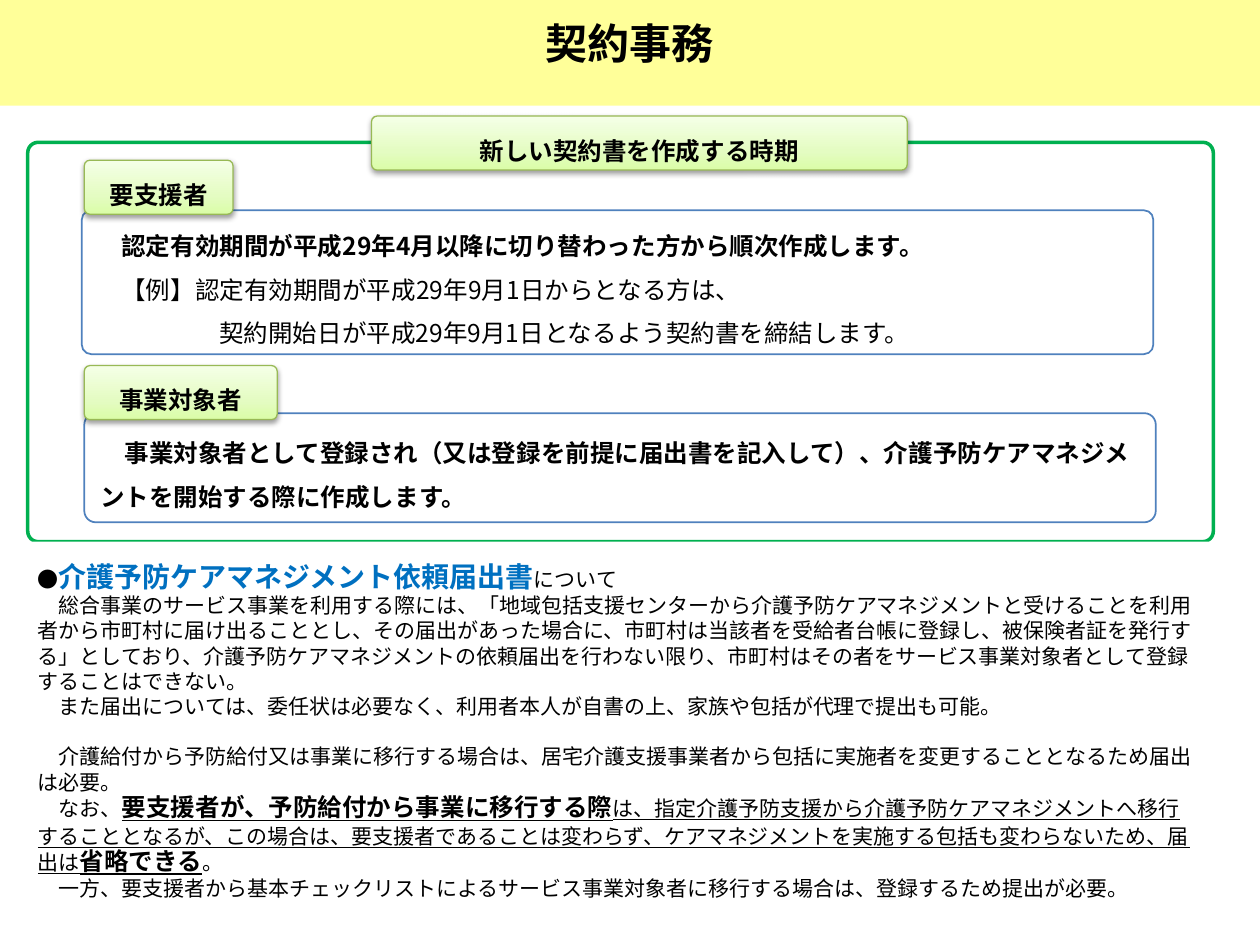
from lxml import etree
from pptx import Presentation
from pptx.dml.color import RGBColor
from pptx.enum.shapes import MSO_SHAPE
from pptx.enum.text import MSO_ANCHOR, MSO_AUTO_SIZE, PP_ALIGN
from pptx.oxml.ns import qn
from pptx.util import Cm, Pt

ROUNDED = MSO_SHAPE.ROUNDED_RECTANGLE
MIDDLE = MSO_ANCHOR.MIDDLE
NO_FIT = MSO_AUTO_SIZE.NONE
LEFT, CENTER = PP_ALIGN.LEFT, PP_ALIGN.CENTER


def color(value):
    return RGBColor.from_string(value)


def span(text, **formats):
    return text, formats


class SlideBuilder:
    font = "Noto Sans CJK JP"
    ink = "000000"
    label_stops = [(0, "DAFDA7"), (35, "E4FCC2"), (100, "F5FFE7")]

    def __init__(self, page):
        self.page = page

    def place(self, box, left, top, width, height):
        box.left, box.top = Cm(left), Cm(top)
        box.width, box.height = Cm(width), Cm(height)

    def fill(self, box, value):
        box.fill.solid()
        box.fill.fore_color.rgb = color(value)

    def add_text(self, box, paragraphs, size=14, align=LEFT, spacing=25):
        frame = box.text_frame
        frame.word_wrap = True
        frame.auto_size = NO_FIT
        frame.vertical_anchor = MIDDLE
        for index, (spans, layout) in enumerate(paragraphs):
            para = frame.paragraphs[0] if index == 0 else frame.add_paragraph()
            properties = para._p.get_or_add_pPr()
            properties.set("marL", str(Pt(layout.get("indent", 0))))
            properties.set("indent", "0")
            etree.SubElement(properties, qn("a:buNone"))
            para.alignment = align
            para.line_spacing = Pt(layout.get("spacing", spacing))
            para.space_before = Pt(layout.get("before", 0))
            for text, formats in spans:
                self.add_run(para, text, **{"size": size, **formats})

    def add_run(self, para, text, size, bold=False, underline=False, ink=ink):
        run = para.add_run()
        run.text = text
        run.font.size = Pt(size)
        run.font.bold = bold
        if underline:
            run.font.underline = True
        run.font.color.rgb = color(ink)
        run.font.name = self.font
        east = etree.SubElement(run.font._element, qn("a:ea"))
        east.set("typeface", self.font)

    def title(self, text, bounds):
        box = self.page.shapes.title
        self.place(box, *bounds)
        self.fill(box, "FFFF99")
        self.add_text(box, [([span(text, bold=True)], {})], 24, CENTER, 20)

    def body(self, paragraphs, bounds):
        box = self.page.placeholders[1]
        self.place(box, *bounds)
        self.fill(box, "FFFFFF")
        self.add_text(box, paragraphs, 12, LEFT, 14.4)
        box.element.getparent().append(box.element)

    def outline(self, bounds, radius, line, weight):
        box = self.page.shapes.add_shape(ROUNDED, *map(Cm, bounds))
        box.adjustments[0] = radius
        box.shadow.inherit = False
        box.fill.background()
        box.line.color.rgb = color(line)
        box.line.width = Pt(weight)
        return box

    def panel(self, paragraphs, bounds, radius):
        box = self.outline(bounds, radius, "4F81BD", 1)
        self.fill(box, "FFFFFF")
        self.add_text(box, paragraphs)

    def label(self, text, bounds):
        box = self.outline(bounds, 0.105, "98B955", 0.75)
        box.fill.gradient()
        box.fill.gradient_angle = 90
        properties = box.element.spPr
        stops = properties.find(".//" + qn("a:gsLst"))
        for stop in list(stops):
            stops.remove(stop)
        for position, value in self.label_stops:
            stop = etree.SubElement(stops, qn("a:gs"), pos=str(position * 1000))
            etree.SubElement(stop, qn("a:srgbClr"), val=value)
        effects = properties.find(qn("a:effectLst"))
        shadow = etree.SubElement(effects, qn("a:outerShdw"), blurRad="40000",
                                  dist="20000", dir="5400000", rotWithShape="0")
        tint = etree.SubElement(shadow, qn("a:srgbClr"), val="000000")
        etree.SubElement(tint, qn("a:alpha"), val="38000")
        self.add_text(box, [([span(text, bold=True)], {})], align=CENTER)


def main():
    deck = Presentation()
    deck.slide_width, deck.slide_height = Cm(25.4), Cm(19.05)
    slide = SlideBuilder(deck.slides.add_slide(deck.slide_layouts[1]))

    slide.title("契約事務", (0, -0.08, 25.4, 2.21))
    slide.outline((0.56, 2.87, 23.9, 8.05), 0.026, "00B050", 2)
    slide.label("新しい契約書を作成する時期", (7.49, 2.34, 10.8, 1.09))

    slide.panel([
        ([span("　認定有効期間が平成29年4月以降に切り替わった方から順次作成します。", bold=True)], {}),
        ([span("　【例】認定有効期間が平成29年9月1日からとなる方は、")], {}),
        ([span("契約開始日が平成29年9月1日となるよう契約書を締結します。")], {"indent": 70}),
    ], (1.65, 4.24, 21.6, 2.9), 0.065)
    slide.label("要支援者", (1.7, 3.23, 3, 1.09))

    slide.panel([
        ([span("　事業対象者として登録され（又は登録を前提に届出書を記入して）、"
               "介護予防ケアマネジメントを開始する際に作成します。", bold=True)], {}),
    ], (1.7, 8.33, 21.6, 2.2), 0.105)
    slide.label("事業対象者", (1.7, 7.37, 3.89, 1.09))

    slide.body([
        ([span("●"),
          span("介護予防ケアマネジメント依頼届出書", size=16, bold=True, ink="0070C0"),
          span("について")], {"spacing": 19}),
        ([span("　総合事業のサービス事業を利用する際には、「地域包括支援センターから"
               "介護予防ケアマネジメントと受けることを利用者から市町村に届け出ることとし、"
               "その届出があった場合に、市町村は当該者を受給者台帳に登録し、"
               "被保険者証を発行する」としており、介護予防ケアマネジメントの依頼届出を"
               "行わない限り、市町村はその者をサービス事業対象者として登録することはできない。")], {}),
        ([span("　また届出については、委任状は必要なく、利用者本人が自書の上、"
               "家族や包括が代理で提出も可能。")], {}),
        ([span("　介護給付から予防給付又は事業に移行する場合は、居宅介護支援事業者から"
               "包括に実施者を変更することとなるため届出は必要。")], {"before": 14.4}),
        ([span("　なお、"),
          span("要支援者が、予防給付から事業に移行する際", size=14, bold=True, underline=True),
          span("は、指定介護予防支援から介護予防ケアマネジメントへ移行することとなるが、"
               "この場合は、要支援者であることは変わらず、ケアマネジメントを実施する包括も"
               "変わらないため、届出は", underline=True),
          span("省略できる", size=14, bold=True, underline=True),
          span("。")], {"spacing": 15.4}),
        ([span("　一方、要支援者から基本チェックリストによるサービス事業対象者に移行する場合は、"
               "登録するため提出が必要。")], {}),
    ], (0.51, 10.92, 23.93, 7.59))

    deck.save("out.pptx")


if __name__ == "__main__":
    main()
